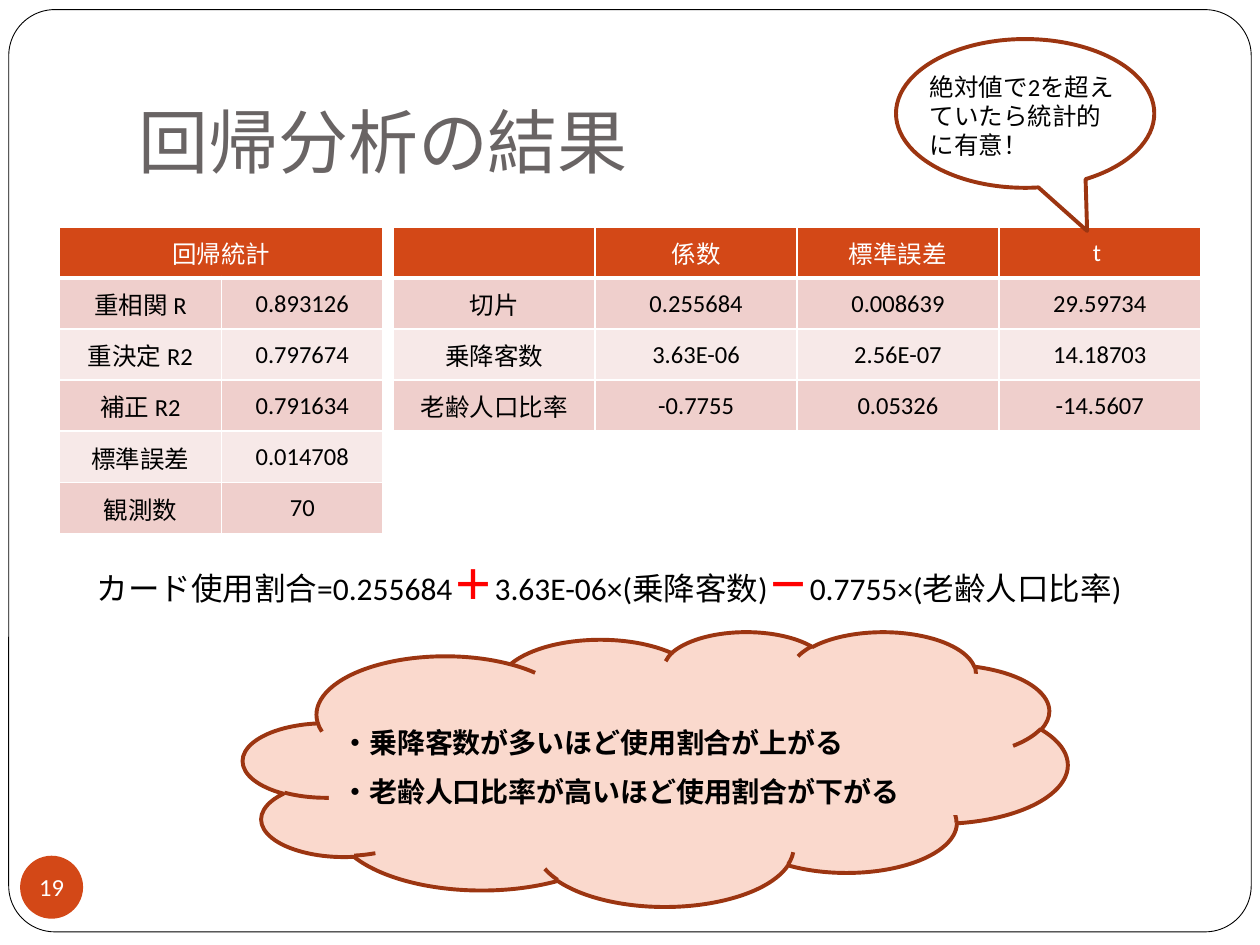
from lxml import etree
from pptx import Presentation
from pptx.dml.color import RGBColor
from pptx.enum.shapes import MSO_SHAPE
from pptx.enum.text import MSO_ANCHOR, PP_ALIGN
from pptx.oxml.ns import qn
from pptx.util import Pt

ROUND_RECT, OVAL, RECT = MSO_SHAPE.ROUNDED_RECTANGLE, MSO_SHAPE.OVAL, MSO_SHAPE.RECTANGLE
CLOUD, CALLOUT = MSO_SHAPE.CLOUD, MSO_SHAPE.OVAL_CALLOUT
TOP, MIDDLE, BOTTOM = MSO_ANCHOR.TOP, MSO_ANCHOR.MIDDLE, MSO_ANCHOR.BOTTOM
LEFT, CENTER = PP_ALIGN.LEFT, PP_ALIGN.CENTER

WHITE = RGBColor(0xFF, 0xFF, 0xFF)
BLACK = RGBColor(0, 0, 0)
GREY = RGBColor(0x69, 0x64, 0x64)
RED = RGBColor(0xFF, 0, 0)
ORANGE = RGBColor(0xD3, 0x48, 0x17)
BROWN = RGBColor(0x9C, 0x35, 0x11)
PEACH = RGBColor(0xFA, 0xD9, 0xCD)
ROW_DARK = RGBColor(0xEF, 0xCF, 0xCC)
ROW_LIGHT = RGBColor(0xF7, 0xE9, 0xE8)

FONT = "Calibri"
ROW_HEIGHT = 29.2

STATISTICS = [
    ["回帰統計", ""],
    ["重相関 R", "0.893126"],
    ["重決定 R2", "0.797674"],
    ["補正 R2", "0.791634"],
    ["標準誤差", "0.014708"],
    ["観測数", "70"],
]
COEFFICIENTS = [
    ["", "係数", "標準誤差", "t "],
    ["切片", "0.255684", "0.008639", "29.59734"],
    ["乗降客数", "3.63E-06", "2.56E-07", "14.18703"],
    ["老齢人口比率", "-0.7755", "0.05326", "-14.5607"],
]
FORMULA = [
    ("カード使用割合=0.255684", 18, BLACK, False),
    ("＋", 24, RED, True),
    ("3.63E-06×(乗降客数)", 18, BLACK, False),
    ("－", 24, RED, True),
    ("0.7755×(老齢人口比率)", 18, BLACK, False),
]
FINDINGS = [
    ("・乗降客数が多いほど使用割合が上がる", 346),
    ("・老齢人口比率が高いほど使用割合が下がる", 375),
]


def add_run(paragraph, text, size, color, bold=False):
    run = paragraph.add_run()
    run.text = text
    run.font.name = FONT
    run.font.size = Pt(size)
    run.font.bold = bold
    run.font.color.rgb = color


def write(shape, runs, anchor=TOP, align=LEFT, margins=(7.2, 3.6, 7.2, 3.6), wrap=True):
    frame = shape.text_frame
    frame.word_wrap = wrap
    frame.vertical_anchor = anchor
    (frame.margin_left, frame.margin_top,
     frame.margin_right, frame.margin_bottom) = map(Pt, margins)
    paragraph = frame.paragraphs[0]
    paragraph.alignment = align
    for run in runs:
        add_run(paragraph, *run)


def add_panel(slide, kind, box, fill, line=None, width=2.25):
    panel = slide.shapes.add_shape(kind, *map(Pt, box))
    panel.shadow.inherit = False
    panel.fill.solid()
    panel.fill.fore_color.rgb = fill
    if line is None:
        panel.line.fill.background()
    else:
        panel.line.color.rgb = line
        panel.line.width = Pt(width)
    return panel


def add_label(slide, box, runs, **layout):
    write(slide.shapes.add_textbox(*map(Pt, box)), runs, **layout)


def set_borders(cell, bottom):
    properties = cell._tc.get_or_add_tcPr()
    sides = [("lnL", 1), ("lnR", 1), ("lnT", 1), ("lnB", bottom)]
    for index, (side, width) in enumerate(sides):
        line = etree.Element(qn(f"a:{side}"), w=str(Pt(width)))
        fill = etree.SubElement(line, qn("a:solidFill"))
        etree.SubElement(fill, qn("a:srgbClr"), val=str(WHITE))
        properties.insert(index, line)


def add_results_table(slide, left, top, width, rows):
    """Table with an orange header row above alternating bands."""
    columns = len(rows[0])
    table = slide.shapes.add_table(
        len(rows), columns, Pt(left), Pt(top), Pt(width), Pt(ROW_HEIGHT * len(rows))).table
    for column in table.columns:
        column.width = Pt(width / columns)
    for r, values in enumerate(rows):
        table.rows[r].height = Pt(ROW_HEIGHT)
        header = r == 0
        fill = ORANGE if header else ROW_DARK if r % 2 else ROW_LIGHT
        for c, value in enumerate(values):
            cell = table.cell(r, c)
            cell.fill.solid()
            cell.fill.fore_color.rgb = fill
            set_borders(cell, 3 if header else 1)
            cell.vertical_anchor = MIDDLE
            cell.margin_left = cell.margin_top = cell.margin_right = Pt(0.7)
            cell.margin_bottom = 0
            paragraph = cell.text_frame.paragraphs[0]
            paragraph.alignment = CENTER
            if value:
                add_run(paragraph, value, 14, WHITE if header else BLACK)
    return table


def add_frame(slide, box):
    frame = add_panel(slide, ROUND_RECT, box, WHITE, BLACK, 0.5)
    frame.adjustments[0] = 0.05


def add_page_number(slide, box):
    badge = add_panel(slide, OVAL, box, ORANGE)
    write(badge, [("19", 14, WHITE)], MIDDLE, CENTER, (0, 0, 0, 0), wrap=False)


def add_findings_cloud(slide, left, top, width, height):
    add_panel(slide, CLOUD, (left, top, width, height), PEACH, BROWN)
    for index, (finding, line_width) in enumerate(FINDINGS):
        box = (left + 49, top + 50.4 + 28 * index, line_width, 26.6)
        write(add_panel(slide, RECT, box, PEACH), [(finding, 16, BLACK, True)])


def add_significance_note(slide, left, top, width, height):
    bubble = add_panel(slide, CALLOUT, (left, top, width, height), WHITE, BROWN)
    bubble.adjustments[0] = 0.24
    bubble.adjustments[1] = 0.79
    add_label(slide, (left + 12.2, top + 15.1, width - 23, 58.3),
              [("絶対値で2を超えていたら統計的に有意！", 14, BLACK)])


def main():
    presentation = Presentation()
    presentation.slide_width, presentation.slide_height = Pt(720), Pt(540)
    slide = presentation.slides.add_slide(presentation.slide_layouts[6])

    # Frame, title and page number
    add_frame(slide, (5, 5.5, 710, 527))
    add_label(slide, (72, 21.6, 612, 90), [("回帰分析の結果", 40, GREY)],
              anchor=BOTTOM, margins=(7.2, 3.6, 7.2, 7.2))
    add_page_number(slide, (11.5, 489, 36, 36))

    # Regression tables
    statistics = add_results_table(slide, 34, 129.6, 185, STATISTICS)
    statistics.cell(0, 0).merge(statistics.cell(0, 1))
    add_results_table(slide, 224.8, 129.6, 461.4, COEFFICIENTS)

    # Fitted equation
    add_label(slide, (48.2, 315.4, 623.5, 36), FORMULA)

    # Conclusions and note on the t column
    add_findings_cloud(slide, 139, 360.7, 471, 157)
    add_significance_note(slide, 512, 22.3, 147.6, 85)

    presentation.save("out.pptx")


if __name__ == "__main__":
    main()
